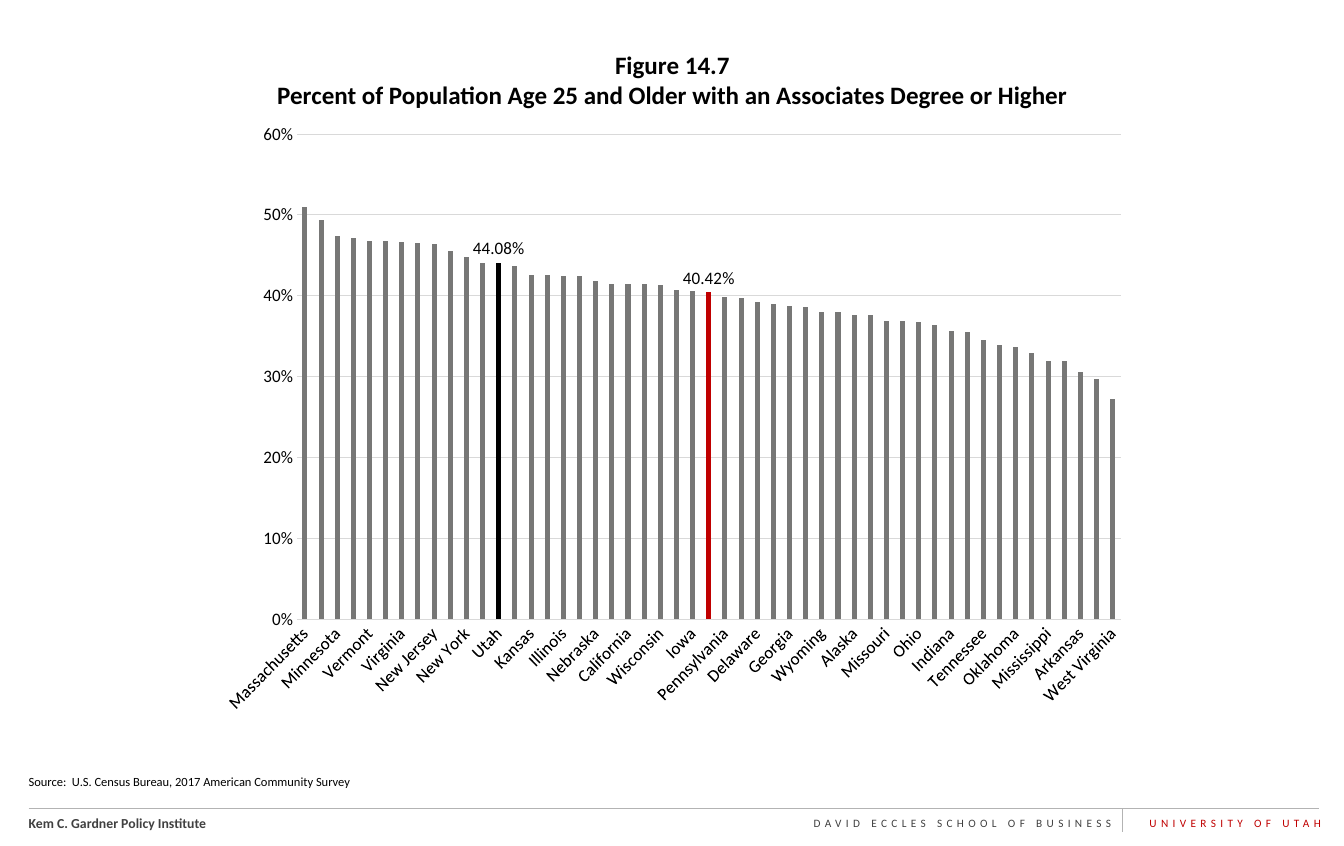
from dataclasses import dataclass

from lxml.etree import SubElement
from pptx import Presentation
from pptx.chart.data import CategoryChartData
from pptx.dml.color import RGBColor
from pptx.enum.chart import XL_CHART_TYPE, XL_LABEL_POSITION, XL_TICK_MARK
from pptx.enum.shapes import MSO_CONNECTOR
from pptx.enum.text import MSO_ANCHOR, PP_ALIGN
from pptx.oxml import parse_xml
from pptx.oxml.ns import nsdecls, qn
from pptx.slide import Slide
from pptx.util import Inches, Length, Pt

WIDTH, HEIGHT = 14.93, 9.4
FONT = "Calibri"
BLACK, DARK, RED = "000000", "404040", "C00000"
BAR, RULE, GRID = "777776", "B3B3B3", "D9D9D9"
HIGHLIGHTS = {"Utah": BLACK, "US & Puerto Rico": RED}
PLOT_SHARES = {"x": 0.055, "y": 0.016, "w": 0.944, "h": 0.745}

SHARES = {
    "Massachusetts": 0.5094, "Colorado": 0.494, "Minnesota": 0.4734,
    "New Hampshire": 0.4717, "Vermont": 0.4679, "Connecticut": 0.4675,
    "Virginia": 0.4661, "Maryland": 0.465, "New Jersey": 0.4643,
    "Washington": 0.4559, "New York": 0.4485, "North Dakota": 0.441,
    "Utah": 0.4408, "Hawaii": 0.4367, "Kansas": 0.4255, "Oregon": 0.4254,
    "Illinois": 0.4238, "Maine": 0.4238, "Nebraska": 0.4188,
    "Rhode Island": 0.4144, "California": 0.4141, "Montana": 0.414,
    "Wisconsin": 0.4133, "North Carolina": 0.4075, "Iowa": 0.4053,
    "US & Puerto Rico": 0.4042, "Pennsylvania": 0.3979, "Florida": 0.3969,
    "Delaware": 0.3917, "South Dakota": 0.3898, "Georgia": 0.3875,
    "Michigan": 0.3865, "Wyoming": 0.3803, "Arizona": 0.3802,
    "Alaska": 0.3767, "South Carolina": 0.3759, "Missouri": 0.3692,
    "Texas": 0.3689, "Ohio": 0.3671, "Idaho": 0.3644, "Indiana": 0.357,
    "New Mexico": 0.355, "Tennessee": 0.3458, "Alabama": 0.3395,
    "Oklahoma": 0.3361, "Nevada": 0.329, "Mississippi": 0.3198,
    "Kentucky": 0.3197, "Arkansas": 0.3055, "Louisiana": 0.2974,
    "West Virginia": 0.2728,
}


@dataclass(frozen=True)
class Area:
    """A rectangle in percent of the slide's width and height."""
    left: float
    top: float
    width: float
    height: float

    def lengths(self) -> tuple[Length, Length, Length, Length]:
        """Return left, top, width and height as slide lengths."""
        return (across(self.left), down(self.top),
                across(self.width), down(self.height))


@dataclass(frozen=True)
class Caption:
    """A text box whose lines share one style."""
    area: Area
    lines: tuple[str, ...]
    size: float
    color: str = BLACK
    bold: bool = False
    align: PP_ALIGN = PP_ALIGN.LEFT
    anchor: MSO_ANCHOR = MSO_ANCHOR.TOP
    spacing: float = 0


CHART_AREA = Area(16.68, 14.57, 66.78, 77.02)
CAPTIONS = (
    Caption(Area(1.47, 95.74, 45, 3.09), ("Kem C. Gardner Policy Institute",),
            11, DARK, bold=True),
    Caption(Area(55, 95.96, 28.32, 2.66), ("DAVID ECCLES SCHOOL OF BUSINESS",),
            9, DARK, align=PP_ALIGN.RIGHT, spacing=3.5),
    Caption(Area(83.6, 95.96, 15.33, 2.66), ("UNIVERSITY OF UTAH",),
            9, RED, align=PP_ALIGN.RIGHT, spacing=3.5),
    Caption(Area(1.47, 90.74, 33.89, 3.09),
            ("Source:  U.S. Census Bureau, 2017 American Community Survey",),
            10, anchor=MSO_ANCHOR.BOTTOM),
    Caption(Area(16.54, 5.32, 66.98, 8.19),
            ("Figure 14.7",
             "Percent of Population Age 25 and Older with an Associates Degree or Higher"),
            20, bold=True, align=PP_ALIGN.CENTER),
)
RULES = (Area(2.14, 95.53, 95.98, 0), Area(83.52, 95.53, 0, 2.87))


def across(percent: float) -> Length:
    """Turn a percentage of the slide's width into a length."""
    return Inches(WIDTH * percent / 100)


def down(percent: float) -> Length:
    """Turn a percentage of the slide's height into a length."""
    return Inches(HEIGHT * percent / 100)


def rgb(value: str) -> RGBColor:
    """Turn a hex string into a colour."""
    return RGBColor.from_string(value)


def add_caption(page: Slide, caption: Caption) -> None:
    """Draw one text box."""
    frame = page.shapes.add_textbox(*caption.area.lengths()).text_frame
    frame.word_wrap = True
    frame.vertical_anchor = caption.anchor
    frame.text = "\n".join(caption.lines)
    for para in frame.paragraphs:
        para.alignment = caption.align
        para.font.name = FONT
        para.font.size = Pt(caption.size)
        para.font.bold = caption.bold
        para.font.color.rgb = rgb(caption.color)
        if caption.spacing:
            properties = para._p.pPr.find(qn("a:defRPr"))
            properties.set("spc", str(int(caption.spacing * 100)))


def add_rule(page: Slide, area: Area) -> None:
    """Draw one thin footer line."""
    left, top, width, height = area.lengths()
    rule = page.shapes.add_connector(
        MSO_CONNECTOR.STRAIGHT, left, top, left + width, top + height)
    rule.line.color.rgb = rgb(RULE)
    rule.line.width = Pt(0.75)
    SubElement(rule._element.spPr, qn("a:effectLst"))


def add_degree_chart(page: Slide) -> None:
    """Draw the column chart of degree holders by state."""
    data = CategoryChartData(number_format="0.00%")
    data.categories = list(SHARES)
    data.add_series("Series 1", list(SHARES.values()))
    chart = page.shapes.add_chart(
        XL_CHART_TYPE.COLUMN_CLUSTERED, *CHART_AREA.lengths(), data).chart
    chart.has_title = chart.has_legend = False
    chart.font.name = FONT
    chart.font.size = Pt(14)
    chart.font.color.rgb = rgb(BLACK)

    plot_area = chart._chartSpace.chart.plotArea
    for layout in plot_area.findall(qn("c:layout")):
        plot_area.remove(layout)
    modes = "".join(f'<c:{side}Mode val="edge"/>' for side in "xy")
    sizes = "".join(f'<c:{key} val="{share}"/>' for key, share in PLOT_SHARES.items())
    plot_area.insert(0, parse_xml(
        f'<c:layout {nsdecls("c")}><c:manualLayout><c:layoutTarget val="inner"/>'
        f'{modes}{sizes}</c:manualLayout></c:layout>'))

    states, percents = chart.category_axis, chart.value_axis
    for axis in (states, percents):
        axis.major_tick_mark = axis.minor_tick_mark = XL_TICK_MARK.NONE
        axis.tick_labels.font.size = Pt(14)
    body = states._element.find(qn("c:txPr")).find(qn("a:bodyPr"))
    body.set("rot", "-2700000")
    percents.minimum_scale, percents.maximum_scale = 0, 0.6
    percents.major_unit = 0.1
    percents.tick_labels.number_format = "0%"
    percents.tick_labels.number_format_is_linked = False
    percents.format.line.fill.background()
    for line in (states.format.line, percents.major_gridlines.format.line):
        line.color.rgb = rgb(GRID)
        line.width = Pt(0.75)

    plot = chart.plots[0]
    plot.gap_width, plot.overlap = 219, -27
    plot.vary_by_categories = False
    bars = plot.series[0]
    bars.invert_if_negative = False
    bars.format.fill.solid()
    bars.format.fill.fore_color.rgb = rgb(BAR)
    bars.data_labels.show_value = False
    for state, color in HIGHLIGHTS.items():
        point = bars.points[list(SHARES).index(state)]
        point.format.fill.solid()
        point.format.fill.fore_color.rgb = rgb(color)
        point.data_label.position = XL_LABEL_POSITION.OUTSIDE_END


def main() -> None:
    """Build the slide and save it."""
    deck = Presentation()
    deck.slide_width, deck.slide_height = Inches(WIDTH), Inches(HEIGHT)
    page = deck.slides.add_slide(deck.slide_layouts[6])
    for rule in RULES:
        add_rule(page, rule)
    add_degree_chart(page)
    for caption in CAPTIONS:
        add_caption(page, caption)
    deck.save("out.pptx")


if __name__ == "__main__":
    main()
